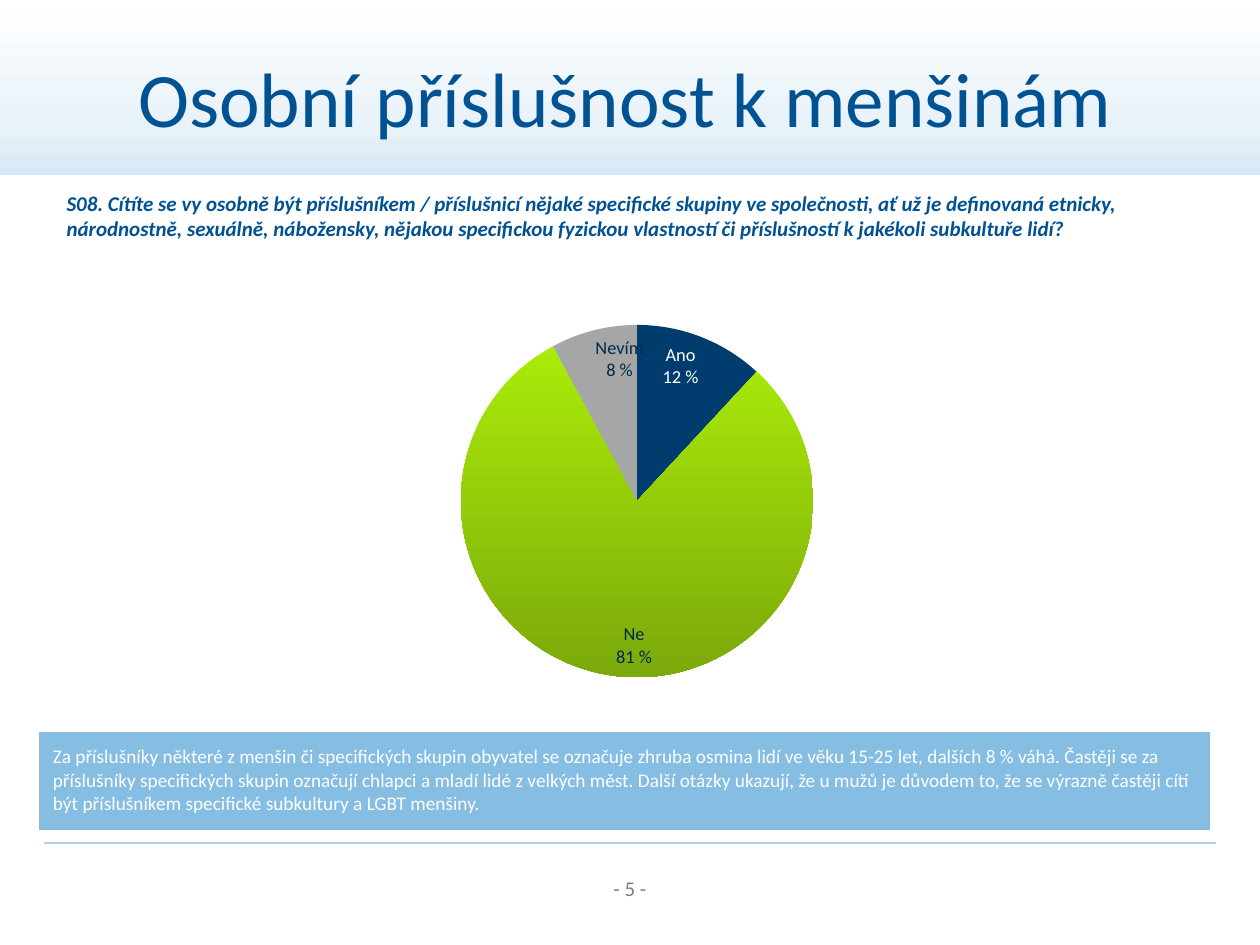
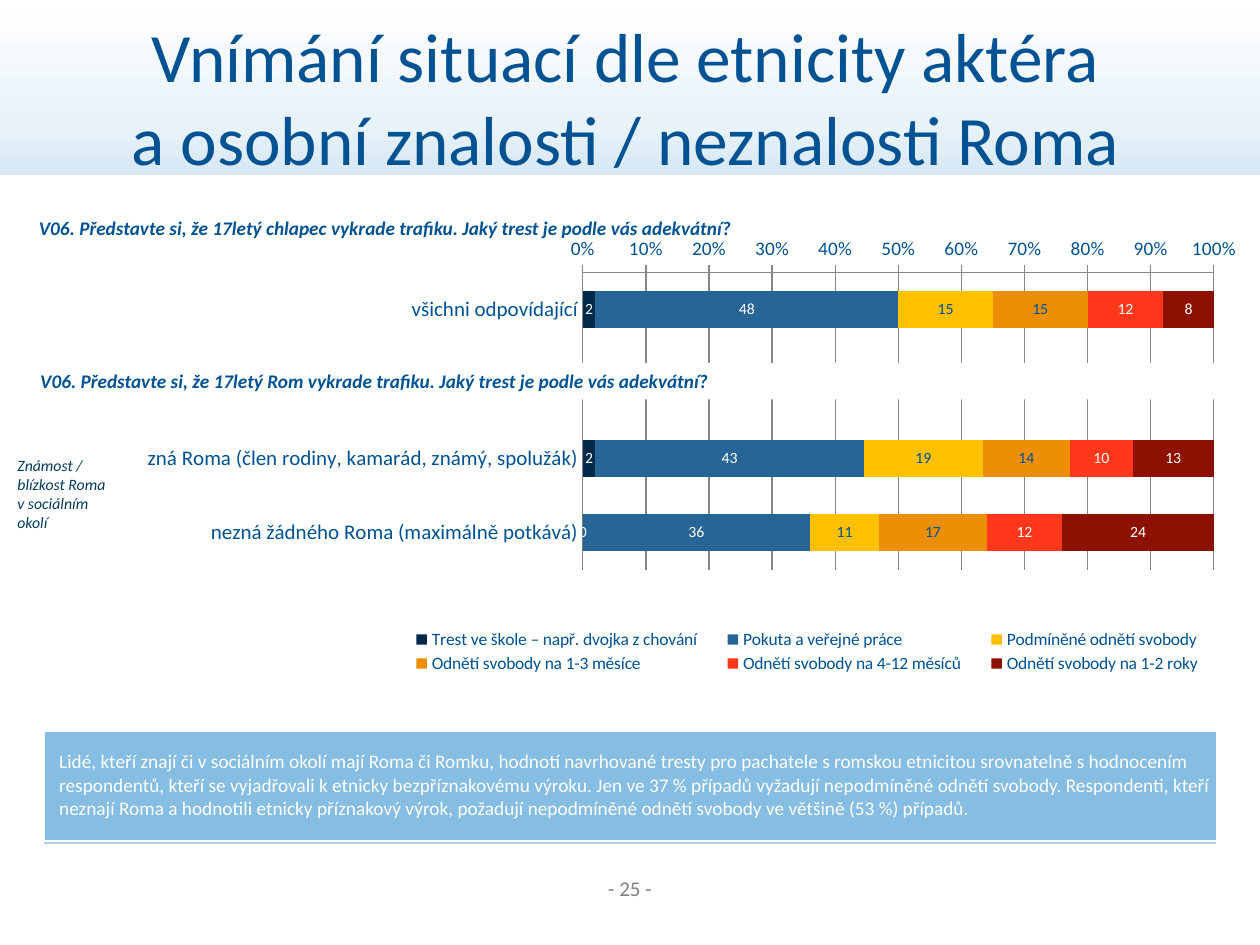
from copy import deepcopy
from typing import NamedTuple

from lxml.etree import SubElement
from pptx import Presentation
from pptx.chart.data import CategoryChartData
from pptx.dml.color import RGBColor
from pptx.enum.chart import (XL_AXIS_CROSSES, XL_CHART_TYPE, XL_LABEL_POSITION,
                             XL_LEGEND_POSITION, XL_TICK_MARK)
from pptx.enum.shapes import MSO_CONNECTOR, MSO_SHAPE
from pptx.enum.text import MSO_ANCHOR, MSO_AUTO_SIZE, PP_ALIGN
from pptx.oxml.ns import qn
from pptx.util import Inches, Pt

WIDTH, HEIGHT = Inches(10), Inches(7.5)
COL, ROW = WIDTH / 100, HEIGHT / 75
FONT = "Calibri"
COLORS = {
    "white": "FFFFFF", "band_mid": "E8F2F9", "band_end": "D7E7F4",
    "rule": "AFCFEA", "page": "808080", "blue": "005293", "note": "86BDE2",
    "side": "043B5D", "grid": "868686", "navy": "00294A", "yes": "003D6E",
    "no_top": "AAEB09", "no_end": "7CA90B", "unknown": "A6A6A6",
    "steel": "286597", "yellow": "FFC000", "orange": "EC8F06",
    "red": "FF371B", "dark_red": "8D1100",
}


class Box(NamedTuple):
    """A region measured in grid columns and rows."""
    x: float
    y: float
    w: float
    h: float

    def sub(self, x, y, w, h):
        return Box(self.x + x, self.y + y, w, h)

    def emu(self):
        return (round(self.x * COL), round(self.y * ROW),
                round(self.w * COL), round(self.h * ROW))


PAGE = Box(0, 0, 100, 75)
HEADER = PAGE.sub(0, 0, 100, 13.9)
BODY = PAGE.sub(0, 13.9, 100, 53)
FOOTER = PAGE.sub(3.5, 66.9, 93, 8.1)


def rgb(name):
    return RGBColor.from_string(COLORS[name])


def style(font, size, color, **values):
    font.color.rgb = rgb(color)
    for name, value in {"name": FONT, "size": Pt(size), **values}.items():
        setattr(font, name, value)


def solid(fill, color):
    fill.solid()
    fill.fore_color.rgb = rgb(color)


def gradient(fill, first, last):
    fill.gradient()
    fill.gradient_angle = 270
    for stop, color, position in zip(fill.gradient_stops, (first, last), (0, 1)):
        stop.color.rgb = rgb(color)
        stop.position = position


def write(tf, text, size, color, align=PP_ALIGN.LEFT, **values):
    tf.word_wrap = True
    tf.text = text
    p = tf.paragraphs[0]
    p.alignment = align
    for r in p.runs:
        style(r.font, size, color, **values)


def text_box(s, box, text, size, color, background=None, **values):
    sp = s.shapes.add_textbox(*box.emu())
    if background:
        solid(sp.fill, background)
    write(sp.text_frame, text, size, color, **values)


def question(s, box, text, size=11, background=None):
    text_box(s, box, text, size, "blue", background, bold=True, italic=True)


def header(s, box, text, size):
    band = s.shapes.add_shape(MSO_SHAPE.RECTANGLE, *box.emu())
    band.shadow.inherit = False
    band.line.fill.background()
    gradient(band.fill, "white", "band_end")
    stops = band.element.find(".//" + qn("a:gsLst"))
    stops.insert(1, deepcopy(stops[0]))
    middle = band.fill.gradient_stops[1]
    middle.position = 0.73
    middle.color.rgb = rgb("band_mid")
    band.element.getparent().insert(2, band.element)

    title = s.shapes.title
    title.left, title.top, title.width, title.height = box.sub(2, 1.4, 95.3, 12.5).emu()
    tf = title.text_frame
    tf.auto_size = MSO_AUTO_SIZE.NONE
    tf.vertical_anchor = MSO_ANCHOR.MIDDLE
    write(tf, text, size, "blue", PP_ALIGN.CENTER)


def footer(s, box, number):
    x, y, w, _ = box.emu()
    rule = s.shapes.add_connector(MSO_CONNECTOR.STRAIGHT, x, y, x + w, y)
    rule.line.color.rgb = rgb("rule")
    rule.line.width = Pt(0.75)
    SubElement(rule.element.spPr, qn("a:effectLst"))
    text_box(s, box.sub(40.2, 2.1, 12.6, 3), f"- {number} -", 12, "page",
             align=PP_ALIGN.CENTER)


def note(s, box, text):
    table = s.shapes.add_table(1, 1, *box.emu()).table
    table.first_row = table.horz_banding = False
    cell = table.cell(0, 0)
    solid(cell.fill, "note")
    margins = {"left": Inches(0.12), "top": 0, "right": 0, "bottom": 0}
    for side, value in margins.items():
        setattr(cell, f"margin_{side}", value)
    cell.vertical_anchor = MSO_ANCHOR.MIDDLE
    write(cell.text_frame, text, 11, "white")


def manual_layout(parent, index, shares, inner=False):
    """Fix a chart part at (x, y, w, h), given as shares of the chart."""
    for old in parent.findall(qn("c:layout")):
        parent.remove(old)
    layout = parent.makeelement(qn("c:layout"))
    parent.insert(index, layout)
    manual = SubElement(layout, qn("c:manualLayout"))
    if inner:
        SubElement(manual, qn("c:layoutTarget"), val="inner")
    for axis in "xy":
        SubElement(manual, qn(f"c:{axis}Mode"), val="edge")
    for side, share in zip("xywh", shares):
        SubElement(manual, qn(f"c:{side}"), val=str(share))


def add_chart(s, box, kind, categories, series, plot_area):
    data = CategoryChartData()
    data.categories = categories
    for name, values in series:
        data.add_series(name, values)
    chart = s.shapes.add_chart(kind, *box.emu(), data).chart
    chart.has_title = chart.has_legend = False
    chart.font.name = FONT
    chart.font.size = Pt(18)
    area = chart.element.find(".//" + qn("c:plotArea"))
    manual_layout(area, 0, plot_area, inner=True)
    return chart


def format_labels(labels, size, color, number_format):
    labels.show_value = True
    labels.number_format = number_format
    labels.number_format_is_linked = False
    style(labels.font, size, color)


def break_lines(labels):
    """Put category name and value on separate lines."""
    labels.find(qn("c:showCatName")).set("val", "1")
    separator = labels.makeelement(qn("c:separator"))
    separator.text = "\n"
    labels.find(qn("c:showBubbleSize")).addnext(separator)


def membership_pie(s, box):
    chart = add_chart(s, box, XL_CHART_TYPE.PIE, ["Ano", "Ne", "Nevím"],
                      [("Series 1", (12, 81, 8))], (0.17, 0.19, 0.67, 0.76))
    chart.plots[0].vary_by_categories = False
    pie = chart.plots[0].series[0]
    yes, no, unknown = (pie.points[i] for i in range(3))
    solid(yes.format.fill, "yes")
    gradient(no.format.fill, "no_top", "no_end")
    solid(unknown.format.fill, "unknown")

    format_labels(pie.data_labels, 10.5, "navy", '##0" %"')
    pie.data_labels.position = XL_LABEL_POSITION.INSIDE_END
    style(yes.data_label.font, 10.5, "white")
    yes.data_label.position = XL_LABEL_POSITION.INSIDE_END
    all_labels = chart.element.find(".//" + qn("c:ser")).find(qn("c:dLbls"))
    yes_label = all_labels.find(qn("c:dLbl"))
    yes_label.insert(1, deepcopy(all_labels.find(qn("c:numFmt"))))
    for labels in (yes_label, all_labels):
        break_lines(labels)


def punishment_bars(s, box):
    categories = ["všichni odpovídající", "",
                  "zná Roma (člen rodiny, kamarád, známý, spolužák)",
                  "nezná žádného Roma (maximálně potkává)"]
    punishments = [
        ("Trest ve škole – např. dvojka z chování", (2, None, 2, 0), "navy", "white"),
        ("Pokuta a veřejné práce", (48, None, 43, 36), "steel", "white"),
        ("Podmíněné odnětí svobody", (15, None, 19, 11), "yellow", "blue"),
        ("Odnětí svobody na 1-3 měsíce", (15, None, 14, 17), "orange", "blue"),
        ("Odnětí svobody na 4-12 měsíců", (12, None, 10, 12), "red", "white"),
        ("Odnětí svobody na 1-2 roky", (8, None, 13, 24), "dark_red", "white"),
    ]
    chart = add_chart(s, box, XL_CHART_TYPE.BAR_STACKED_100, categories,
                      [row[:2] for row in punishments], (0.464, 0.073, 0.509, 0.68))
    plot = chart.plots[0]
    plot.vary_by_categories = False
    plot.gap_width = plot.overlap = 100
    for bar, (_, _, color, label_color) in zip(plot.series, punishments):
        solid(bar.format.fill, color)
        format_labels(bar.data_labels, 9, label_color, "#,##0")

    answers, share = chart.category_axis, chart.value_axis
    answers.reverse_order = True
    answers.crosses = XL_AXIS_CROSSES.MAXIMUM
    answers.major_tick_mark = XL_TICK_MARK.NONE
    answers.format.line.fill.background()
    style(answers.tick_labels.font, 12, "blue")
    share.minimum_scale, share.maximum_scale, share.major_unit = 0, 1, 0.1
    share.major_tick_mark = XL_TICK_MARK.OUTSIDE
    share.has_major_gridlines = True
    for line in (share.format.line, share.major_gridlines.format.line):
        line.color.rgb = rgb("grid")
        line.width = Pt(0.75)
    share.tick_labels.number_format = "0%"
    share.tick_labels.number_format_is_linked = False
    style(share.tick_labels.font, 11, "blue")

    chart.has_legend = True
    legend = chart.legend
    legend.position = XL_LEGEND_POSITION.BOTTOM
    legend.include_in_layout = False
    style(legend.font, 10, "blue")
    manual_layout(chart.element.find(".//" + qn("c:legend")), 1, (0.31, 0.88, 0.67, 0.12))


def new_slide(prs, title, size, number):
    s = prs.slides.add_slide(prs.slide_layouts[5])
    header(s, HEADER, title, size)
    footer(s, FOOTER, number)
    return s


def membership_slide(prs, box):
    s = new_slide(prs, "Osobní příslušnost k menšinám", 44, 5)
    note(s, box.sub(3, 44.1, 93.1, 7.9),
         "Za příslušníky některé z menšin či specifických skupin obyvatel se označuje "
         "zhruba osmina lidí ve věku 15-25 let, dalších 8 % váhá. Častěji se za "
         "příslušníky specifických skupin označují chlapci a mladí lidé z velkých měst. "
         "Další otázky ukazují, že u mužů je důvodem to, že se výrazně častěji cítí být "
         "příslušníkem specifické subkultury a LGBT menšiny.")
    question(s, box.sub(4.3, 0.7, 90.6, 5),
             "S08. Cítíte se vy osobně být příslušníkem / příslušnicí nějaké specifické "
             "skupiny ve společnosti, ať už je definovaná etnicky, národnostně, sexuálně, "
             "nábožensky, nějakou specifickou fyzickou vlastností či příslušností "
             "k jakékoli subkultuře lidí?", 12)
    membership_pie(s, box.sub(28.7, 4.9, 43.3, 36.8))


def punishment_slide(prs, box):
    s = new_slide(prs, "Vnímání situací dle etnicity aktéra\v"
                       "a osobní znalosti / neznalosti Roma", 39.6, 25)
    punishment_bars(s, box.sub(0.6, 4.9, 98.4, 35))
    note(s, box.sub(3.5, 44.1, 93.1, 8.7),
         "Lidé, kteří znají či v sociálním okolí mají Roma či Romku, hodnotí navrhované "
         "tresty pro pachatele s romskou etnicitou srovnatelně s hodnocením respondentů, "
         "kteří se vyjadřovali k etnicky bezpříznakovému výroku. Jen ve 37 % případů "
         "vyžadují nepodmíněné odnětí svobody. Respondenti, kteří neznají Roma a hodnotili "
         "etnicky příznakový výrok, požadují nepodmíněné odnětí svobody ve většině "
         "(53 %) případů.")
    text_box(s, box.sub(0.4, 21.8, 9.4, 7.1), "Známost / blízkost Roma v sociálním okolí",
             9, "side", italic=True)
    for x, y, actor, background in ((2.1, 2.8, "chlapec", None), (2.2, 14.9, "Rom", "white")):
        question(s, box.sub(x, y, 96.9, 2.9),
                 f"V06. Představte si, že 17letý {actor} vykrade trafiku. "
                 "Jaký trest je podle vás adekvátní?", background=background)


def main():
    prs = Presentation()
    prs.slide_width, prs.slide_height = WIDTH, HEIGHT
    membership_slide(prs, BODY)
    punishment_slide(prs, BODY)
    prs.save("out.pptx")


if __name__ == "__main__":
    main()
